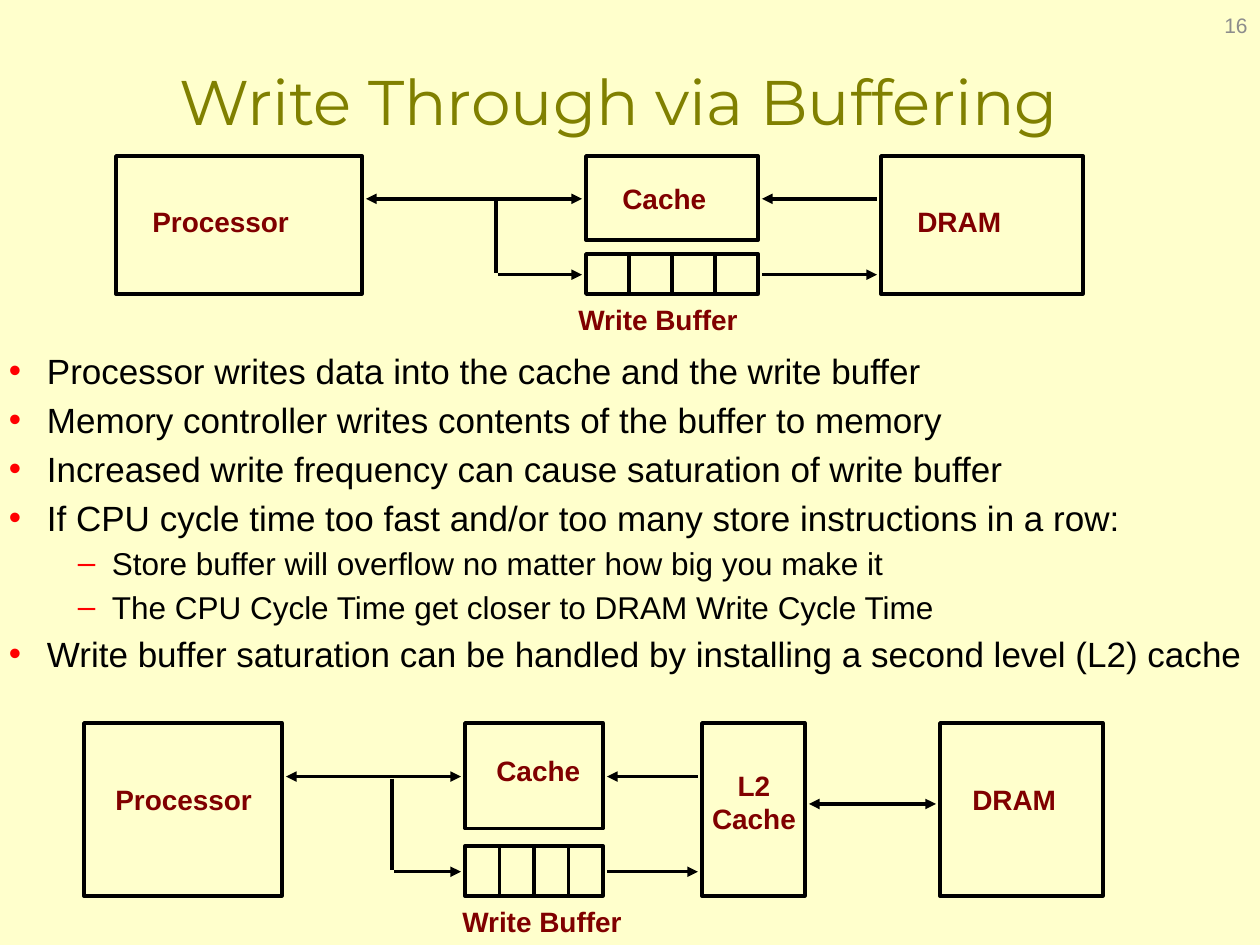
from lxml import etree
from pptx import Presentation
from pptx.dml.color import RGBColor
from pptx.enum.shapes import MSO_CONNECTOR, MSO_SHAPE
from pptx.enum.text import MSO_ANCHOR, PP_ALIGN
from pptx.oxml.ns import qn
from pptx.util import Pt

PX = 914400 / 126
CREAM = RGBColor(0xFF, 0xFF, 0xCC)
BLACK = RGBColor(0, 0, 0)
MAROON = RGBColor(0x80, 0, 0)
OLIVE = RGBColor(0x80, 0x80, 0)
GRAY = RGBColor(0x8C, 0x8C, 0x8C)
RECT, LINE = MSO_SHAPE.RECTANGLE, MSO_CONNECTOR.STRAIGHT
LEFT, MID, RIGHT = PP_ALIGN.LEFT, PP_ALIGN.CENTER, PP_ALIGN.RIGHT
GAP = 4  # between a wire and the box it points at

BULLETS = [
    (0, "Processor writes data into the cache and the write buffer"),
    (0, "Memory controller writes contents of the buffer to memory"),
    (0, "Increased write frequency can cause saturation of write buffer"),
    (0, "If CPU cycle time too fast and/or too many store instructions in a row:"),
    (1, "Store buffer will overflow no matter how big you make it"),
    (1, "The CPU Cycle Time get closer to DRAM Write Cycle Time"),
    (0, "Write buffer saturation can be handled by installing a second level (L2) cache"),
]
# level: text size, space before, left margin px, indent px, bullet
LEVELS = {0: (20, 4, 38, -38, "•"), 1: (18, 3.5, 103, -34, "–")}


def px(*nums):
    return [round(n * PX) for n in nums]


def style(para, size, color, bold=False, font="Arial", align=LEFT):
    para.alignment = align
    for run in para.runs:
        run.font.size = Pt(size)
        run.font.name = font
        run.font.bold = bold
        run.font.color.rgb = color


def label(shapes, text, x, y, w, h=46, align=LEFT):
    frame = shapes.add_textbox(*px(x, y, w, h)).text_frame
    frame.word_wrap = False
    frame.text = text
    for para in frame.paragraphs:
        style(para, 16, MAROON, True, align=align)


def block(shapes, x, y, w, h):
    box = shapes.add_shape(RECT, *px(x, y, w, h))
    box.shadow.inherit = False
    box.fill.background()
    box.line.color.rgb = BLACK
    box.line.width = Pt(2)


def wire(shapes, x1, y1, x2, y2, head=False, tail=False):
    line = shapes.add_connector(LINE, *px(x1, y1, x2, y2))
    line.line.color.rgb = BLACK
    line.line.width = Pt(2)
    props = line.element.spPr
    for tag, used in (("a:headEnd", head), ("a:tailEnd", tail)):
        if used:
            etree.SubElement(props.find(qn("a:ln")), qn(tag), type="triangle")
    etree.SubElement(props, qn("a:effectLst"))


def buffered(slide, box, proc, cache, size, tap, mem, pad):
    """Draw processor, cache and write buffer, wired to memory at mem."""
    x, y, h = box
    shapes = slide.shapes.add_group_shape().shapes
    row, low = y + 0.31 * h, y + 0.86 * h
    top, deep = y + 0.71 * h, 0.29 * h
    left, tap, mem = x + cache, x + tap, x + mem
    right = left + size

    block(shapes, x, y, proc, h)
    label(shapes, "Processor", x + pad, row, 176)
    block(shapes, left, y, size, 0.61 * h)
    label(shapes, "Cache", left + pad, y + 0.14 * h, 112)
    block(shapes, left, top, size, deep)
    for i in range(1, 4):
        cut = left + i * size / 4
        wire(shapes, cut, top, cut, top + deep)
    label(shapes, "Write Buffer", left - pad + 4, y + h + 2, 190)

    wire(shapes, x + proc + GAP, row, left - GAP, row, head=True, tail=True)
    wire(shapes, tap, row + 2, tap, low - 2)
    wire(shapes, tap + 2, low, left - GAP, low, tail=True)
    wire(shapes, right + GAP, row, mem - GAP, row, head=True)
    wire(shapes, right + GAP, low, mem - GAP, low, tail=True)
    return shapes


def dram(shapes, x, y, w, h, pad):
    block(shapes, x, y, w, h)
    label(shapes, "DRAM", x + pad, y + 0.31 * h, 112)


def single(slide, x, y, h):
    shapes = buffered(slide, (x, y, h), 246, 470, 172, 380, 765, 24)
    dram(shapes, x + 765, y, 202, h, 24)


def double(slide, x, y, h):
    shapes = buffered(slide, (x, y, h), 198, 381, 138, 308, 618, 19)
    block(shapes, x + 618, y, 103, h)
    label(shapes, "L2\nCache", x + 614, y + 39, 112, 79, MID)
    dram(shapes, x + 856, y, 163, h, 20)
    wire(shapes, x + 721 + GAP, y + 81, x + 856 - GAP, y + 81, head=True, tail=True)


def points(slide, x, y, w, h):
    frame = slide.shapes.add_textbox(*px(x, y, w, h)).text_frame
    frame.word_wrap = True
    frame.margin_left = frame.margin_right = px(9)[0]
    frame.margin_top = frame.margin_bottom = px(4)[0]
    for i, (level, text) in enumerate(BULLETS):
        para = frame.add_paragraph() if i else frame.paragraphs[0]
        para.text = text
        para.level = level
        size, space, margin, indent, mark = LEVELS[level]
        style(para, size, BLACK)
        para.space_before = Pt(space)
        props = para._p.get_or_add_pPr()
        props.set("marL", str(px(margin)[0]))
        props.set("indent", str(px(indent)[0]))
        color = etree.SubElement(props, qn("a:buClr"))
        etree.SubElement(color, qn("a:srgbClr"), val="FF0000")
        etree.SubElement(props, qn("a:buFont"), typeface="Arial")
        etree.SubElement(props, qn("a:buChar"), char=mark)


def heading(slide, x, y, w, h):
    title = slide.shapes.title
    title.left, title.top, title.width, title.height = px(x, y, w, h)
    frame = title.text_frame
    frame.text = "Write Through via Buffering"
    frame.vertical_anchor = MSO_ANCHOR.MIDDLE
    style(frame.paragraphs[0], 36, OLIVE, font="Montserrat", align=MID)


def number(slide, x, y, w, h):
    frame = slide.shapes.add_textbox(*px(x, y, w, h)).text_frame
    frame.word_wrap = True
    frame.text = "16"
    frame.vertical_anchor = MSO_ANCHOR.MIDDLE
    style(frame.paragraphs[0], 12, GRAY, align=RIGHT)


def main():
    deck = Presentation()
    deck.slide_width, deck.slide_height = px(1260, 945)
    slide = deck.slides.add_slide(deck.slide_layouts[5])
    slide.background.fill.solid()
    slide.background.fill.fore_color.rgb = CREAM
    single(slide, 116, 156, 138)
    points(slide, 0, 345, 1260, 341)
    double(slide, 84, 723, 173)
    heading(slide, 73, 21, 1092, 158)
    number(slide, 966, 0, 294, 50)
    deck.save("out.pptx")


if __name__ == "__main__":
    main()
